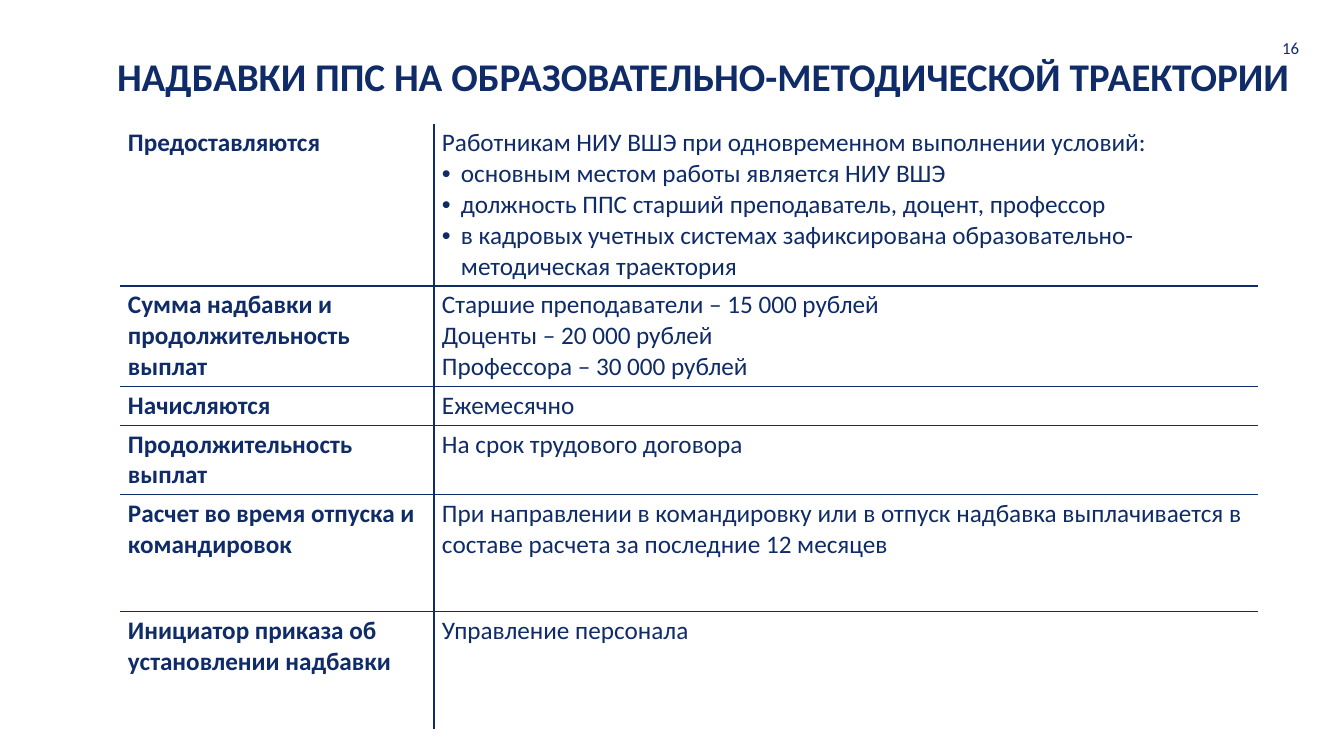
"""Builds the slide on allowances for the educational and methodological track."""
from lxml import etree
from pptx import Presentation
from pptx.dml.color import RGBColor
from pptx.enum.text import MSO_ANCHOR, MSO_AUTO_SIZE, PP_ALIGN
from pptx.oxml.ns import qn
from pptx.util import Pt

TITLE = "НАДБАВКИ ППС НА ОБРАЗОВАТЕЛЬНО-МЕТОДИЧЕСКОЙ ТРАЕКТОРИИ"
PAGE_NUMBER = "16"
BULLET = "•"
ROWS = [
    (162, "Предоставляются", [
        "Работникам НИУ ВШЭ при одновременном выполнении условий:",
        (BULLET, "основным местом работы является НИУ ВШЭ"),
        (BULLET, "должность ППС старший преподаватель, доцент, профессор"),
        (BULLET, "в кадровых учетных системах зафиксирована образовательно-методическая траектория"),
    ]),
    (100, "Сумма надбавки и продолжительность выплат", [
        "Старшие преподаватели – 15 000 рублей",
        "Доценты – 20 000 рублей",
        "Профессора – 30 000 рублей",
    ]),
    (39, "Начисляются", ["Ежемесячно"]),
    (69, "Продолжительность выплат", ["На срок трудового договора"]),
    (117, "Расчет во время отпуска и командировок", [
        "При направлении в командировку или в отпуск надбавка выплачивается "
        "в составе расчета за последние 12 месяцев",
    ]),
    (117, "Инициатор приказа об установлении надбавки", ["Управление персонала"]),
]

NAVY = RGBColor(0x0F, 0x2C, 0x68)
FONT = "Calibri"
LEFT, RIGHT, TOP, MIDDLE = PP_ALIGN.LEFT, PP_ALIGN.RIGHT, MSO_ANCHOR.TOP, MSO_ANCHOR.MIDDLE
FIXED_SIZE = MSO_AUTO_SIZE.NONE

SLIDE_SIZE = (1344, 756)
TITLE_BOX = (114, 49, 1246, 46)
NUMBER_BOX = (1236, 23, 73, 50)
TABLE_ORIGIN = (120, 124)
COLUMN_WIDTHS = (314, 824)
BULLET_INDENT = 19


def px(length):
    return round(length * 914400 / 100.8)


def format_text(paragraph, size, bold=False):
    for run in paragraph.runs:
        run.font.name = FONT
        run.font.size = Pt(size)
        run.font.bold = bold
        run.font.color.rgb = NAVY


def set_insets(target, horizontal, vertical):
    target.margin_left = target.margin_right = px(horizontal)
    target.margin_top = target.margin_bottom = px(vertical)


def set_bullet(paragraph):
    properties = paragraph._p.get_or_add_pPr()
    properties.set("marL", str(px(BULLET_INDENT)))
    properties.set("indent", str(-px(BULLET_INDENT)))
    etree.SubElement(properties, qn("a:buFont"), typeface="Arial")
    etree.SubElement(properties, qn("a:buChar"), char=BULLET)


def set_borders(cell, inner_sides):
    properties = cell._tc.get_or_add_tcPr()
    for position, side in enumerate("LRTB"):
        line = etree.Element(qn("a:ln" + side), w=str(Pt(1)))
        if side in inner_sides:
            fill = etree.SubElement(line, qn("a:solidFill"))
            etree.SubElement(fill, qn("a:srgbClr"), val=str(NAVY))
        else:
            etree.SubElement(line, qn("a:noFill"))
        properties.insert(position, line)


def fill_cell(cell, items, bold):
    set_insets(cell, 8, 4)
    cell.vertical_anchor = TOP
    cell.fill.background()
    frame = cell.text_frame
    for index, item in enumerate(items):
        paragraph = frame.add_paragraph() if index else frame.paragraphs[0]
        if isinstance(item, tuple):
            set_bullet(paragraph)
            item = item[1]
        paragraph.text = item
        format_text(paragraph, 18, bold)


def add_allowance_table(slide):
    heights = [row[0] for row in ROWS]
    bounds = (*TABLE_ORIGIN, sum(COLUMN_WIDTHS), sum(heights))
    table = slide.shapes.add_table(len(ROWS), 2, *map(px, bounds)).table
    table.first_row = table.horz_banding = False
    for column, width in zip(table.columns, COLUMN_WIDTHS):
        column.width = px(width)
    for index, (height, label, details) in enumerate(ROWS):
        table.rows[index].height = px(height)
        horizontal = ("T" if index else "") + ("B" if index < len(ROWS) - 1 else "")
        for column, (items, vertical) in enumerate((([label], "R"), (details, "L"))):
            cell = table.cell(index, column)
            fill_cell(cell, items, bold=column == 0)
            set_borders(cell, horizontal + vertical)


def set_line_of_text(shape, text, size, alignment, anchor, bold):
    frame = shape.text_frame
    frame.text = text
    frame.word_wrap = True
    frame.auto_size = FIXED_SIZE
    frame.vertical_anchor = anchor
    frame.paragraphs[0].alignment = alignment
    format_text(frame.paragraphs[0], size, bold)


def main():
    presentation = Presentation()
    presentation.slide_width, presentation.slide_height = map(px, SLIDE_SIZE)
    slide = presentation.slides.add_slide(presentation.slide_layouts[5])

    title = slide.shapes.title
    title.left, title.top, title.width, title.height = map(px, TITLE_BOX)
    set_line_of_text(title, TITLE, 28, LEFT, TOP, True)
    set_insets(title.text_frame, 3, 3)

    add_allowance_table(slide)

    number = slide.shapes.add_textbox(*map(px, NUMBER_BOX))
    set_line_of_text(number, PAGE_NUMBER, 12, RIGHT, MIDDLE, False)
    presentation.save("out.pptx")


if __name__ == "__main__":
    main()
